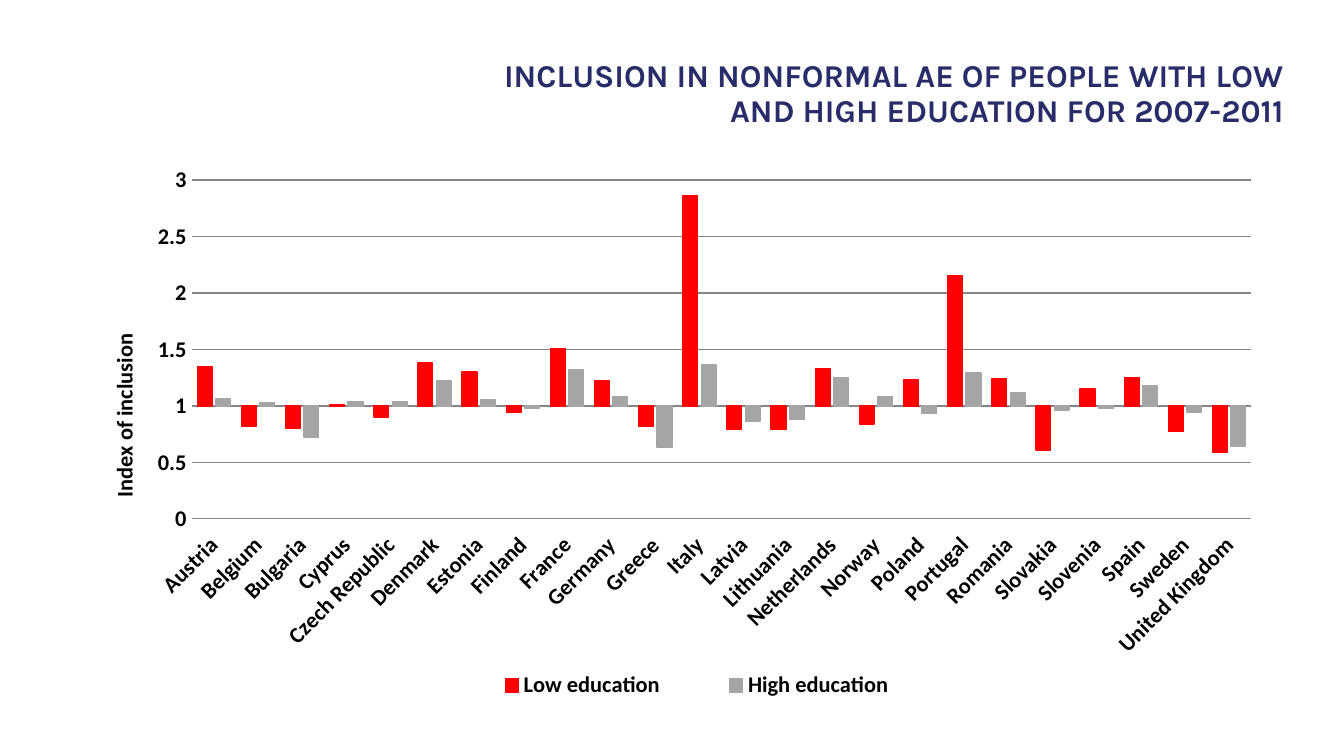
from dataclasses import dataclass

from lxml import etree
from pptx import Presentation
from pptx.chart.data import CategoryChartData
from pptx.dml.color import RGBColor
from pptx.enum.chart import (XL_CHART_TYPE, XL_LEGEND_POSITION, XL_TICK_LABEL_POSITION,
                             XL_TICK_MARK)
from pptx.enum.text import MSO_ANCHOR, MSO_AUTO_SIZE, PP_ALIGN
from pptx.oxml.ns import qn
from pptx.util import Pt

COLUMNS = XL_CHART_TYPE.COLUMN_CLUSTERED
BOTTOM = XL_LEGEND_POSITION.BOTTOM
LOW = XL_TICK_LABEL_POSITION.LOW
NO_TICK = XL_TICK_MARK.NONE
MIDDLE = MSO_ANCHOR.MIDDLE
RIGHT = PP_ALIGN.RIGHT
GRAY = "868686"

COUNTRIES = [
    "Austria", "Belgium", "Bulgaria", "Cyprus", "Czech Republic", "Denmark",
    "Estonia", "Finland", "France", "Germany", "Greece", "Italy",
    "Latvia", "Lithuania", "Netherlands", "Norway", "Poland", "Portugal",
    "Romania", "Slovakia", "Slovenia", "Spain", "Sweden", "United Kingdom",
]


@dataclass
class Education:
    name: str
    color: str
    index: list[float]


LEVELS = [
    Education("Low education", "FF0000", [
        1.35, 0.82, 0.8, 1.01, 0.9, 1.38, 1.3, 0.94, 1.51, 1.22, 0.82, 2.86,
        0.79, 0.79, 1.33, 0.84, 1.23, 2.15, 1.24, 0.61, 1.15, 1.25, 0.77, 0.59]),
    Education("High education", "A5A5A5", [
        1.06, 1.03, 0.72, 1.04, 1.04, 1.22, 1.05, 0.98, 1.32, 1.08, 0.63, 1.36,
        0.86, 0.88, 1.25, 1.08, 0.93, 1.29, 1.12, 0.96, 0.98, 1.18, 0.94, 0.64]),
]


def rgb(color: str) -> RGBColor:
    return RGBColor.from_string(color)


def set_font(font, *, name="Calibri", size=12, color="000000", bold=True) -> None:
    font.name, font.size, font.bold = name, Pt(size), bold
    font.color.rgb = rgb(color)


def set_line(line, color: str) -> None:
    line.color.rgb = rgb(color)
    line.width = Pt(0.75)


def set_layout(parent, position: int, **fractions: float) -> None:
    """Place a chart part by fractions (x, y, w, h) of the chart's size."""
    for old in parent.findall(qn("c:layout")):
        parent.remove(old)
    layout = etree.Element(qn("c:layout"))
    manual = etree.SubElement(layout, qn("c:manualLayout"))
    if parent.tag == qn("c:plotArea"):
        etree.SubElement(manual, qn("c:layoutTarget"), val="inner")
    for key in "xy":
        etree.SubElement(manual, qn(f"c:{key}Mode"), val="edge")
    for key, value in fractions.items():
        etree.SubElement(manual, qn(f"c:{key}"), val=str(value))
    parent.insert(position, layout)


def add_title(s, text: str) -> None:
    sp = s.shapes.title
    sp.left, sp.top, sp.width, sp.height = Pt(247), Pt(29.5), Pt(448), Pt(42.5)
    tf = sp.text_frame
    tf.word_wrap = True
    tf.auto_size = MSO_AUTO_SIZE.NONE
    tf.vertical_anchor = MIDDLE
    p = tf.paragraphs[0]
    p.alignment, p.line_spacing = RIGHT, 0.9
    r = p.add_run()
    r.text = text
    set_font(r.font, name="Karla", size=17, color="292C69")


def format_axes(chart) -> None:
    cat, val = chart.category_axis, chart.value_axis
    for axis in (cat, val):
        axis.major_tick_mark = axis.minor_tick_mark = NO_TICK
        set_font(axis.tick_labels.font)
    cat.tick_label_position = LOW
    cat._element.txPr.bodyPr.set("rot", "-2700000")
    set_line(cat.format.line, GRAY)

    val.minimum_scale, val.maximum_scale, val.major_unit = 0, 3, 0.5
    val.crosses_at = 1
    val.tick_labels.number_format = "General"
    val.tick_labels.number_format_is_linked = False
    val.format.line.fill.background()
    val.has_major_gridlines = True
    set_line(val.major_gridlines.format.line, GRAY)

    title = val.axis_title
    tf = title.text_frame
    r = tf.paragraphs[0].add_run()
    r.text = "Index of inclusion"
    set_font(r.font)
    tf._txBody.bodyPr.set("rot", "-5400000")
    set_layout(title._element, 1, x=0.03, y=0.31)


def add_inclusion_chart(s, levels: list[Education]) -> None:
    data = CategoryChartData()
    data.categories = COUNTRIES
    for level in levels:
        data.add_series(level.name, level.index)
    chart = s.shapes.add_chart(COLUMNS, Pt(36.7), Pt(83.5), Pt(647.3), Pt(300.2), data).chart
    set_font(chart.font)
    chart.has_title = False

    plot = chart.plots[0]
    plot.gap_width, plot.overlap, plot.vary_by_categories = 75, -25, False
    for series, level in zip(plot.series, levels):
        series.invert_if_negative = False
        series.format.fill.solid()
        series.format.fill.fore_color.rgb = rgb(level.color)
        set_line(series.format.line, level.color)

    format_axes(chart)
    set_layout(chart._chartSpace.chart.plotArea, 0, x=0.102, y=0.043, w=0.877, h=0.605)

    chart.has_legend = True
    legend = chart.legend
    legend.position = BOTTOM
    legend.include_in_layout = False
    set_font(legend.font)
    set_layout(legend._element, 1, x=0.31, y=0.91, w=0.42, h=0.07)


def main() -> None:
    prs = Presentation()
    prs.slide_width, prs.slide_height = Pt(720), Pt(405)
    s = prs.slides.add_slide(prs.slide_layouts[5])
    add_title(s, "INCLUSION IN NONFORMAL AE OF PEOPLE WITH LOW AND HIGH EDUCATION FOR 2007-2011")
    add_inclusion_chart(s, LEVELS)
    prs.save("out.pptx")


if __name__ == "__main__":
    main()
